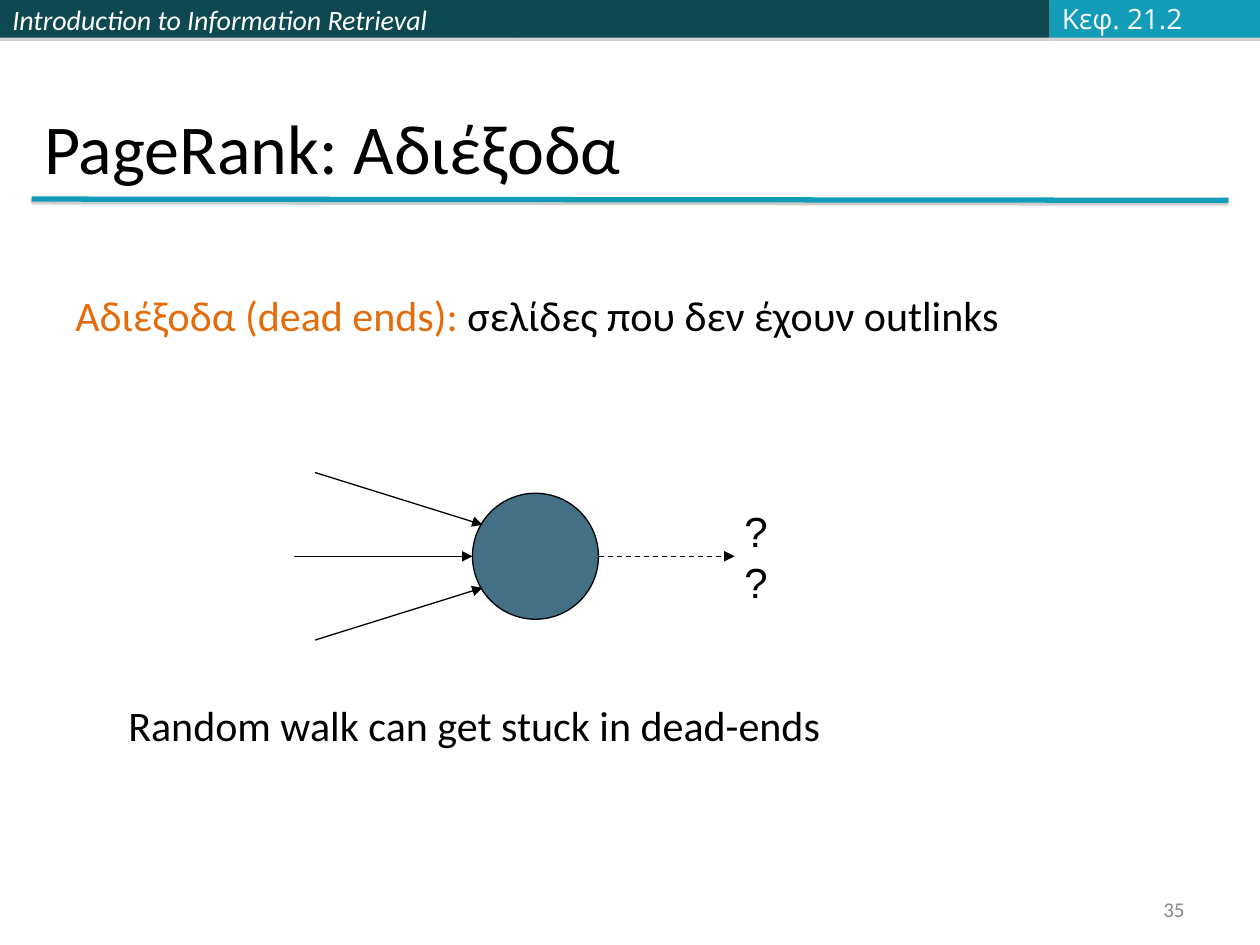
from dataclasses import dataclass

import pptx
import pptx.dml.color
import pptx.enum.dml
import pptx.enum.shapes
import pptx.enum.text
import pptx.oxml
import pptx.oxml.ns
import pptx.util

Inches = pptx.util.Inches
Pt = pptx.util.Pt
ALIGN = pptx.enum.text.PP_ALIGN
ANCHOR = pptx.enum.text.MSO_ANCHOR
SHAPE = pptx.enum.shapes.MSO_SHAPE


@dataclass(frozen=True)
class Theme:
    dark: str = "0E4851"
    accent: str = "139CB7"
    node: str = "437085"
    term: str = "E46C0A"
    ink: str = "000000"
    white: str = "FFFFFF"
    chapter: str = "FBFCFF"
    muted: str = "898989"
    shadow: str = "808080"
    body_font: str = "Calibri"
    chapter_font: str = "Open Sans"
    mark_font: str = "Arial"
    title_size: int = 40
    body_size: int = 24
    header_size: int = 16
    number_size: int = 12
    thin: float = 0.75
    rule: float = 3


THEME = Theme()


def rgb(value):
    return pptx.dml.color.RGBColor.from_string(value)


def write(shape, runs, size, font=THEME.body_font, align=ALIGN.LEFT,
          anchor=ANCHOR.TOP, wrap=True, italic=False):
    """Fill the shape's one paragraph with (text, colour) runs."""
    frame = shape.text_frame
    frame.word_wrap = wrap
    frame.vertical_anchor = anchor
    paragraph = frame.paragraphs[0]
    paragraph.alignment = align
    for text, color in runs:
        run = paragraph.add_run()
        run.text = text
        run.font.size = Pt(size)
        run.font.name = font
        run.font.italic = italic
        run.font.color.rgb = rgb(color)


def add_text(slide, box, runs, size, **style):
    write(slide.shapes.add_textbox(*map(Inches, box)), runs, size, **style)


def add_solid(slide, kind, box, color):
    shape = slide.shapes.add_shape(kind, *map(Inches, box))
    shape.shadow.inherit = False
    shape.fill.solid()
    shape.fill.fore_color.rgb = rgb(color)
    shape.line.fill.background()
    return shape


def add_line(slide, start, end, color, width):
    line = slide.shapes.add_connector(
        pptx.enum.shapes.MSO_CONNECTOR.STRAIGHT, *map(Inches, (*start, *end)))
    line.line.color.rgb = rgb(color)
    line.line.width = Pt(width)
    pptx.oxml.ns.qn("a:effectLst")
    line._element.spPr.append(
        pptx.oxml.parse_xml(f'<a:effectLst {pptx.oxml.ns.nsdecls("a")}/>'))
    return line


def add_arrow(slide, start, end, dashed=False):
    arrow = add_line(slide, start, end, THEME.ink, THEME.thin)
    if dashed:
        arrow.line.dash_style = pptx.enum.dml.MSO_LINE.DASH
    arrow.line._get_or_add_ln().append(pptx.oxml.parse_xml(
        f'<a:tailEnd {pptx.oxml.ns.nsdecls("a")} type="triangle"/>'))


def drop_shadow(shape, distance, opacity):
    effects = shape._element.spPr.find(pptx.oxml.ns.qn("a:effectLst"))
    effects.append(pptx.oxml.parse_xml(
        f'<a:outerShdw {pptx.oxml.ns.nsdecls("a")} dist="{Pt(distance)}" '
        f'dir="5400000" rotWithShape="0"><a:srgbClr val="{THEME.shadow}">'
        f'<a:alpha val="{opacity * 1000}"/></a:srgbClr></a:outerShdw>'))


def add_header(slide, box):
    left, top, width, height = box
    edges = (left, left + 4.08, left + 8.33, left + width)
    colors = (THEME.dark, THEME.dark, THEME.accent)
    bands = []
    for start, end, color in zip(edges, edges[1:], colors):
        band = add_solid(slide, SHAPE.RECTANGLE,
                         (start, top, end - start, height), color)
        drop_shadow(band, 1.8, 35)
        bands.append(band)
    write(bands[0], [("Introduction to Information Retrieval", THEME.white)],
          THEME.header_size, anchor=ANCHOR.MIDDLE, italic=True)
    add_text(slide, (edges[2], top - 0.04, 1.24, 0.37),
             [("Κεφ. 21.2", THEME.chapter)], THEME.header_size,
             font=THEME.chapter_font, anchor=ANCHOR.MIDDLE, wrap=False)


def add_title(slide, box):
    left, top, width, height = box
    title = slide.shapes.title
    title.left, title.top, title.width, title.height = map(Inches, box)
    write(title, [("PageRank: Αδιέξοδα", THEME.ink)], THEME.title_size,
          anchor=ANCHOR.BOTTOM)
    rule_y = top + height + 0.03
    rule = add_line(slide, (left, rule_y), (left + width, rule_y + 0.01),
                    THEME.accent, THEME.rule)
    drop_shadow(rule, 1.6, 38)


def add_dead_end(slide, box):
    """Draw a node with three links in and one uncertain link out."""
    left, top, width, height = box
    middle = top + height / 2
    node_left, size = left + 1.42, 1
    node = add_solid(slide, SHAPE.OVAL,
                     (node_left, middle - size / 2, size, size), THEME.node)
    node.line.color.rgb = rgb(THEME.ink)
    node.line.width = Pt(THEME.thin)
    for side in (1, -1):
        add_arrow(slide, (left + 0.17, middle + side * height / 2),
                  (node_left + 0.08, middle + side * 0.25))
    add_arrow(slide, (left, middle), (node_left, middle))
    add_arrow(slide, (node_left + size, middle),
              (left + width - 0.42, middle), dashed=True)
    add_text(slide, (left + width - 0.5, middle - 0.25, 0.5, 0.5),
             [("??", THEME.ink)], THEME.body_size, font=THEME.mark_font,
             align=ALIGN.CENTER, anchor=ANCHOR.MIDDLE)


def main():
    deck = pptx.Presentation()
    deck.slide_width, deck.slide_height = Inches(10), Inches(7.5)
    slide = deck.slides.add_slide(deck.slide_layouts.get_by_name("Title Only"))
    add_header(slide, (0, 0, 10, 0.3))
    add_title(slide, (0.25, 0.18, 9.5, 1.37))
    add_text(slide, (0.5, 2.25, 8.45, 0.5),
             [("Αδιέξοδα (dead ends): ", THEME.term),
              ("σελίδες που δεν έχουν outlinks", THEME.ink)], THEME.body_size)
    add_dead_end(slide, (2.33, 3.75, 3.92, 1.33))
    add_text(slide, (0.92, 5.5, 8.42, 0.5),
             [("Random walk can get stuck in dead-ends", THEME.ink)],
             THEME.body_size)
    add_text(slide, (7.17, 7.08, 2.33, 0.27), [("35", THEME.muted)],
             THEME.number_size, align=ALIGN.RIGHT, anchor=ANCHOR.MIDDLE)
    deck.save("out.pptx")


if __name__ == "__main__":
    main()
